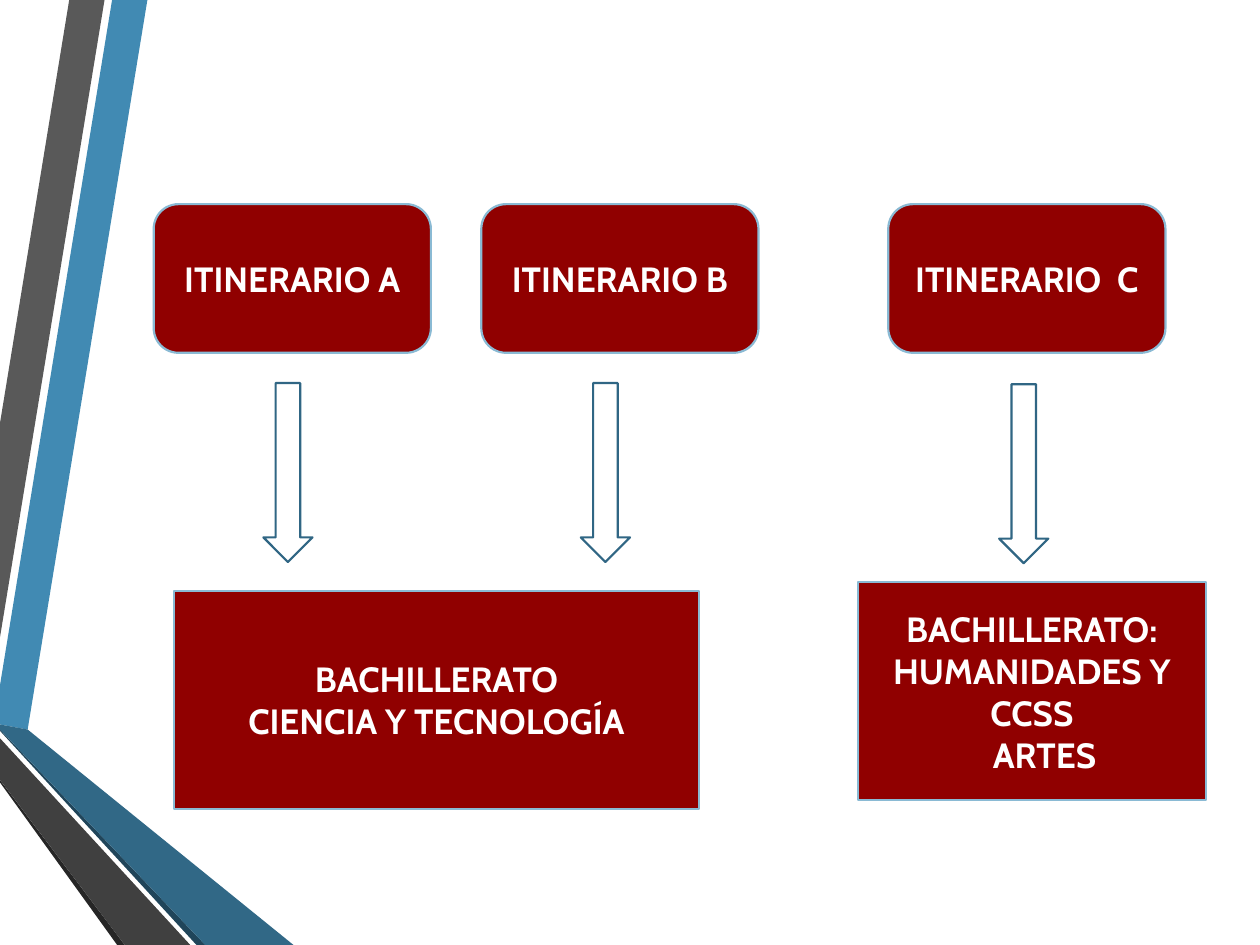
import dataclasses

import pptx
import pptx.dml.color
import pptx.enum.shapes
import pptx.enum.text
import pptx.util

Inches = pptx.util.Inches
Shape = pptx.enum.shapes.MSO_SHAPE


@dataclasses.dataclass(frozen=True)
class Theme:
    font: str = "Cabin"
    size: int = 20
    line_width: float = 1.25
    white: str = "FFFFFF"
    box: str = "900000"
    box_line: str = "8ABAD4"
    arrow_line: str = "306684"
    blue: str = "418AB3"
    blue_dark: str = "316886"
    blue_edge: str = "20455A"
    grey: str = "595959"
    grey_dark: str = "404040"
    grey_edge: str = "262626"


THEME = Theme()

# Ribbons down the left edge, from back to front
RIBBONS = [
    (THEME.blue, [(0, 5.44), (0, 5.75), (0.22, 5.79), (1.17, 0), (0.89, 0)]),
    (THEME.grey, [(0.83, 0), (0.55, 0), (0, 3.36), (0, 5.06)]),
    (THEME.grey_edge, [(0, 6.19), (0, 6.21), (0.93, 7.5), (0.99, 7.5)]),
    (THEME.blue_edge, [(0, 5.79), (0, 5.8), (1.56, 7.5), (1.63, 7.5)]),
    (THEME.blue_dark, [(0, 5.79), (1.63, 7.5), (2.33, 7.5), (0.22, 5.79), (0, 5.75)]),
    (THEME.grey_dark, [(0, 6.19), (0.99, 7.5), (1.51, 7.5), (0, 5.86)]),
]

# Label, box left, arrow left, arrow top
ROUTES = [
    ("ITINERARIO A", 1.22, 2.09, 3.04),
    ("ITINERARIO B", 3.82, 4.61, 3.04),
    ("ITINERARIO  C", 7.05, 7.93, 3.05),
]


def rgb(value):
    return pptx.dml.color.RGBColor.from_string(value)


def paint(sp, fill, line=None):
    sp.shadow.inherit = False
    sp.fill.solid()
    sp.fill.fore_color.rgb = rgb(fill)
    if line:
        sp.line.color.rgb = rgb(line)
        sp.line.width = pptx.util.Pt(THEME.line_width)
    else:
        sp.line.fill.background()


def add_ribbon(s, color, points):
    corners = [(Inches(x), Inches(y)) for x, y in points]
    builder = s.shapes.build_freeform(*corners[0], scale=1.0)
    builder.add_line_segments(corners[1:], close=True)
    paint(builder.convert_to_shape(), color)


def add_block(s, kind, box, fill, line):
    sp = s.shapes.add_shape(kind, *map(Inches, box))
    paint(sp, fill, line)
    return sp


def write(tf, text, size=THEME.size, color=THEME.white, bold=True):
    tf.word_wrap = True
    tf.vertical_anchor = pptx.enum.text.MSO_ANCHOR.MIDDLE
    for i, line in enumerate(text.split("\n")):
        p = tf.add_paragraph() if i else tf.paragraphs[0]
        p.alignment = pptx.enum.text.PP_ALIGN.CENTER
        r = p.add_run()
        r.text = line
        r.font.name = THEME.font
        r.font.size = pptx.util.Pt(size)
        r.font.bold = bold
        r.font.color.rgb = rgb(color)


def add_box(s, kind, box, text):
    sp = add_block(s, kind, box, THEME.box, THEME.box_line)
    write(sp.text_frame, text)
    return sp


def main():
    prs = pptx.Presentation()
    prs.slide_width, prs.slide_height = Inches(10), Inches(7.5)
    s = prs.slides.add_slide(prs.slide_layouts[6])

    # Decoration
    for color, points in RIBBONS:
        add_ribbon(s, color, points)

    # Routes and their arrows
    for label, left, arrow_left, arrow_top in ROUTES:
        add_box(s, Shape.FLOWCHART_ALTERNATE_PROCESS, (left, 1.62, 2.2, 1.18), label)
        add_block(s, Shape.DOWN_ARROW, (arrow_left, arrow_top, 0.39, 1.42),
                  THEME.white, THEME.arrow_line)

    # Destinations
    add_box(s, Shape.FLOWCHART_PROCESS, (1.38, 4.69, 4.17, 1.73),
            "BACHILLERATO\nCIENCIA Y TECNOLOGÍA")
    arts = add_box(s, Shape.FLOWCHART_PROCESS, (6.81, 4.62, 2.76, 1.73),
                   "BACHILLERATO:\nHUMANIDADES Y CCSS\nARTES")
    # The last line sits slightly right of centre
    indent = arts.text_frame.paragraphs[-1]._p.get_or_add_pPr()
    indent.set("marL", str(Inches(0.2)))

    prs.save("out.pptx")


if __name__ == "__main__":
    main()
